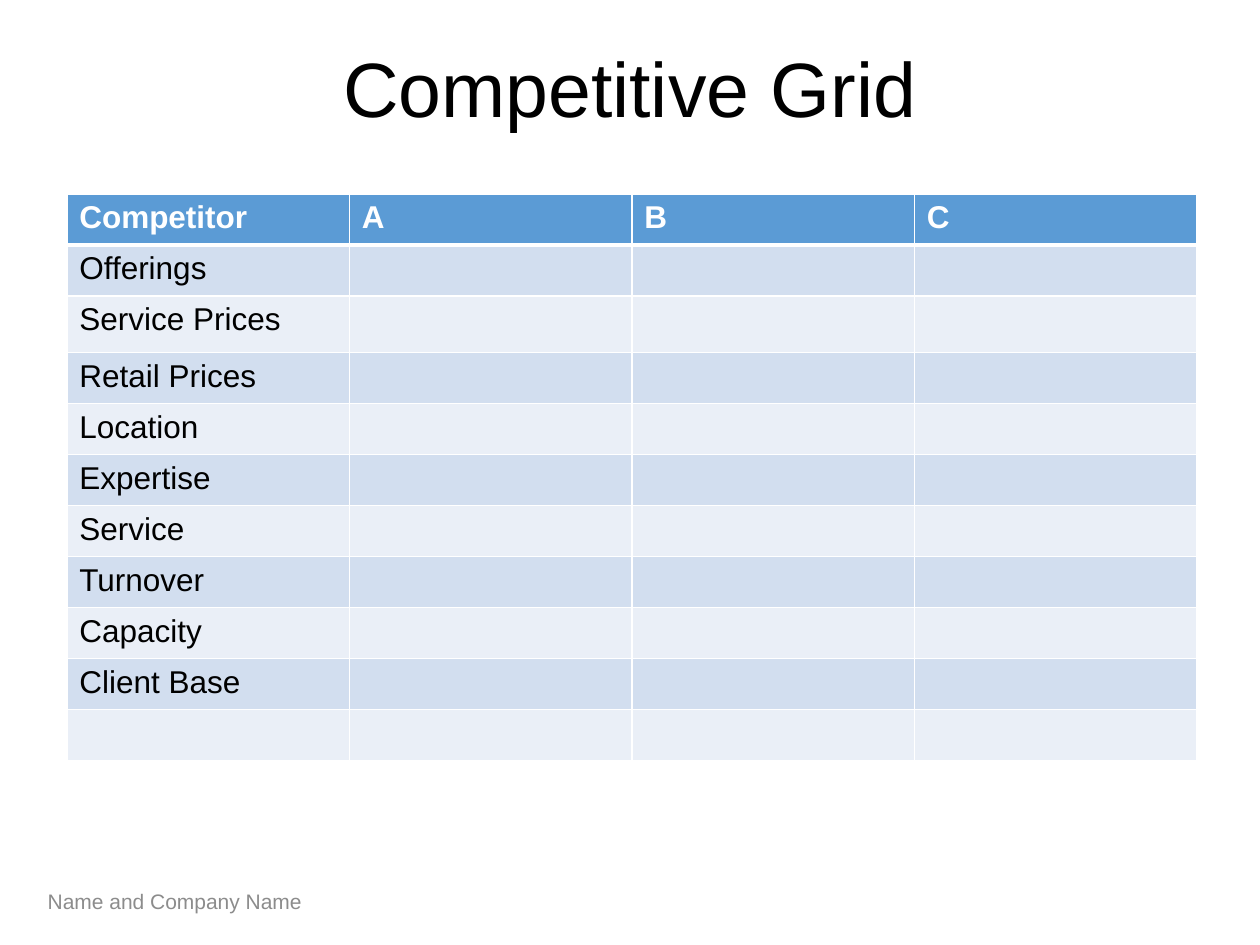
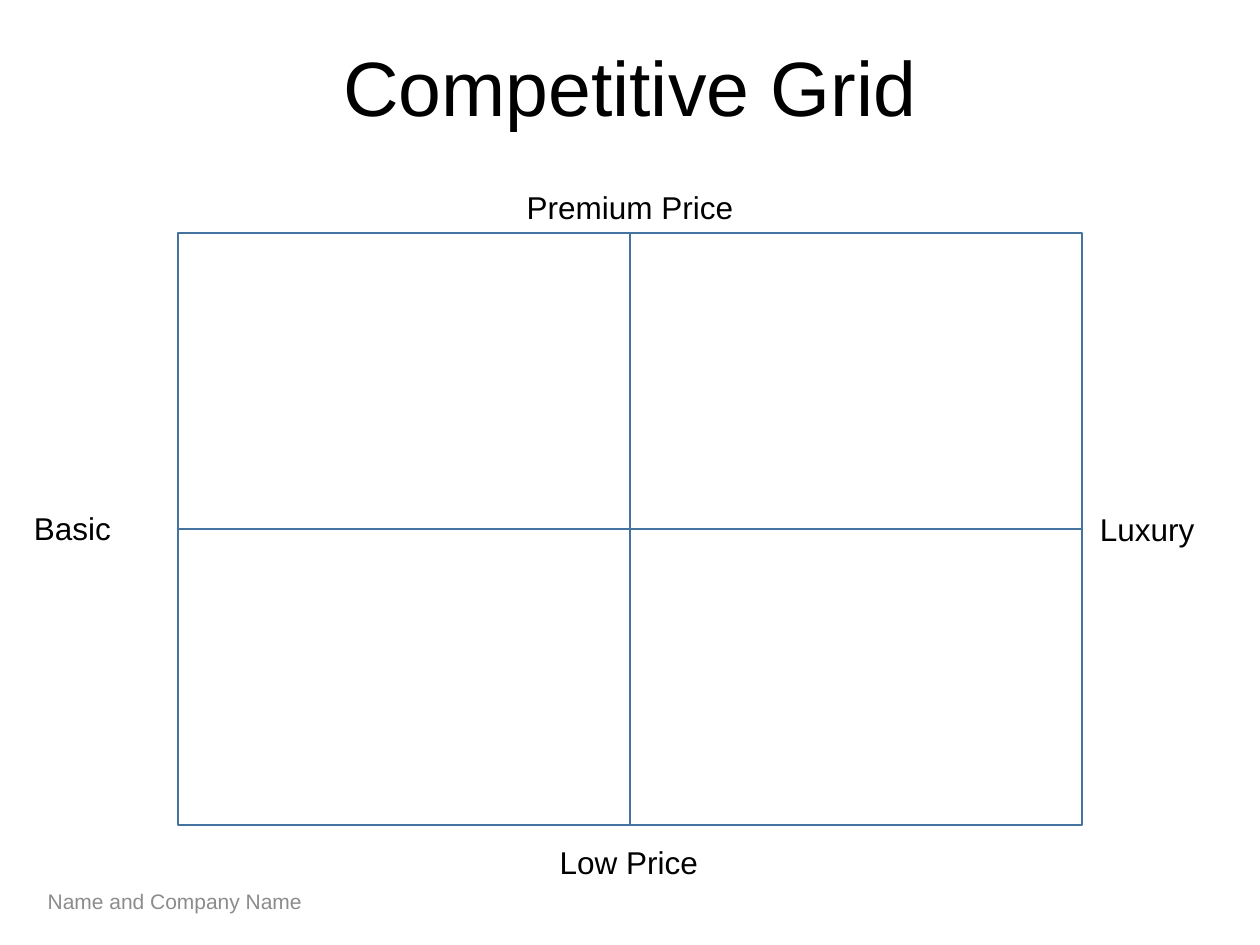
import lxml.etree
import pptx
import pptx.dml.color
import pptx.enum.shapes
import pptx.enum.text
import pptx.oxml.ns
import pptx.util

Inches = pptx.util.Inches
Pt = pptx.util.Pt
RGBColor = pptx.dml.color.RGBColor
Align = pptx.enum.text.PP_ALIGN
Anchor = pptx.enum.text.MSO_ANCHOR
qn = pptx.oxml.ns.qn

FONT = "Arial"
BLACK = RGBColor(0x00, 0x00, 0x00)
WHITE = RGBColor(0xFF, 0xFF, 0xFF)
FOOTER_GRAY = RGBColor(0x8C, 0x8C, 0x8C)
HEADER_BLUE = RGBColor(0x5B, 0x9B, 0xD5)
BAND_COLORS = (RGBColor(0xD2, 0xDE, 0xEF), RGBColor(0xEA, 0xEF, 0xF7))
OUTLINE_BLUE = RGBColor(0x43, 0x73, 0x9E)

COMPETITORS = ["A", "B", "C"]
CRITERIA = ["Offerings", "Service Prices", "Retail Prices", "Location", "Expertise",
            "Service", "Turnover", "Capacity", "Client Base", ""]


def write_text(frame, text, size=18, color=BLACK, bold=False, align=Align.LEFT, spacing=None):
    para = frame.paragraphs[0]
    para.alignment = align
    para.line_spacing = spacing
    span = para.add_run()
    span.text = text
    span.font.name = FONT
    span.font.size = Pt(size)
    span.font.bold = bold
    span.font.color.rgb = color


def set_cell_border(cell, side, width):
    """Draw one white edge; side is L, R, T or B, called in that order before the fill."""
    properties = cell._tc.get_or_add_tcPr()
    line = lxml.etree.SubElement(properties, qn(f"a:ln{side}"), w=str(Pt(width)))
    fill = lxml.etree.SubElement(line, qn("a:solidFill"))
    lxml.etree.SubElement(fill, qn("a:srgbClr"), val=str(WHITE))


class DeckBuilder:
    def __init__(self):
        self.deck = pptx.Presentation()
        self.deck.slide_width = Inches(10)
        self.deck.slide_height = Inches(7.5)
        self.page = None

    def add_page(self, title, title_top):
        self.page = self.deck.slides.add_slide(self.deck.slide_layouts[6])
        self.page.background.fill.solid()
        self.page.background.fill.fore_color.rgb = WHITE
        self.add_text("Name and Company Name", 0.28, 6.95, 8.22, 0.4,
                      anchor=Anchor.MIDDLE, size=12, color=FOOTER_GRAY)
        self.add_text(title, 0.69, title_top, 8.62, 1.45, anchor=Anchor.MIDDLE,
                      size=44, align=Align.CENTER, spacing=0.9)

    def add_text(self, text, left, top, width, height, anchor=Anchor.TOP, **text_format):
        box = self.page.shapes.add_textbox(
            Inches(left), Inches(top), Inches(width), Inches(height))
        box.text_frame.word_wrap = True
        box.text_frame.vertical_anchor = anchor
        write_text(box.text_frame, text, **text_format)

    def add_outline(self, left, top, width, height):
        box = self.page.shapes.add_shape(
            pptx.enum.shapes.MSO_SHAPE.RECTANGLE,
            Inches(left), Inches(top), Inches(width), Inches(height))
        box.shadow.inherit = False
        box.fill.background()
        box.line.color.rgb = OUTLINE_BLUE
        box.line.width = Pt(1)

    def add_table(self, rows, left, top, width, heights):
        """Fill a grid with a header row and alternating bands."""
        table = self.page.shapes.add_table(
            len(rows), len(rows[0]), Inches(left), Inches(top),
            Inches(width), Inches(sum(heights))).table
        for row, height in zip(table.rows, heights):
            row.height = Inches(height)
        for row_index, row in enumerate(rows):
            is_header = row_index == 0
            fill = HEADER_BLUE if is_header else BAND_COLORS[(row_index - 1) % 2]
            edges = {"L": 1, "R": 1, "T": 3 if row_index == 1 else 1, "B": 3 if is_header else 1}
            for column_index, text in enumerate(row):
                cell = table.cell(row_index, column_index)
                for side, line_width in edges.items():
                    set_cell_border(cell, side, line_width)
                cell.fill.solid()
                cell.fill.fore_color.rgb = fill
                if text:
                    write_text(cell.text_frame, text, bold=is_header,
                               color=WHITE if is_header else BLACK)


def build_comparison_table(builder):
    builder.add_page("Competitive Grid", title_top=0.01)
    rows = [["Competitor"] + COMPETITORS]
    rows += [[criterion] + [""] * len(COMPETITORS) for criterion in CRITERIA]
    heights = [0.45 if row[0] == "Service Prices" else 0.405 for row in rows]
    builder.add_table(rows, 0.53, 1.54, 8.97, heights)


def build_price_quadrants(builder):
    builder.add_page("Competitive Grid", title_top=0)
    left, top, width, height = 1.41, 1.85, 3.59, 2.35
    for column in range(2):
        for row in range(2):
            builder.add_outline(left + column * width, top + row * height, width, height)
    builder.add_text("Basic", 0.17, 3.99, 1.08, 0.4)
    builder.add_text("Luxury", 8.63, 4, 1.08, 0.4)
    builder.add_text("Premium Price", 3.91, 1.44, 2.18, 0.4, align=Align.CENTER)
    builder.add_text("Low Price", 3.9, 6.64, 2.18, 0.4, align=Align.CENTER)


def main():
    builder = DeckBuilder()
    build_comparison_table(builder)
    build_price_quadrants(builder)
    builder.deck.save("out.pptx")


if __name__ == "__main__":
    main()
